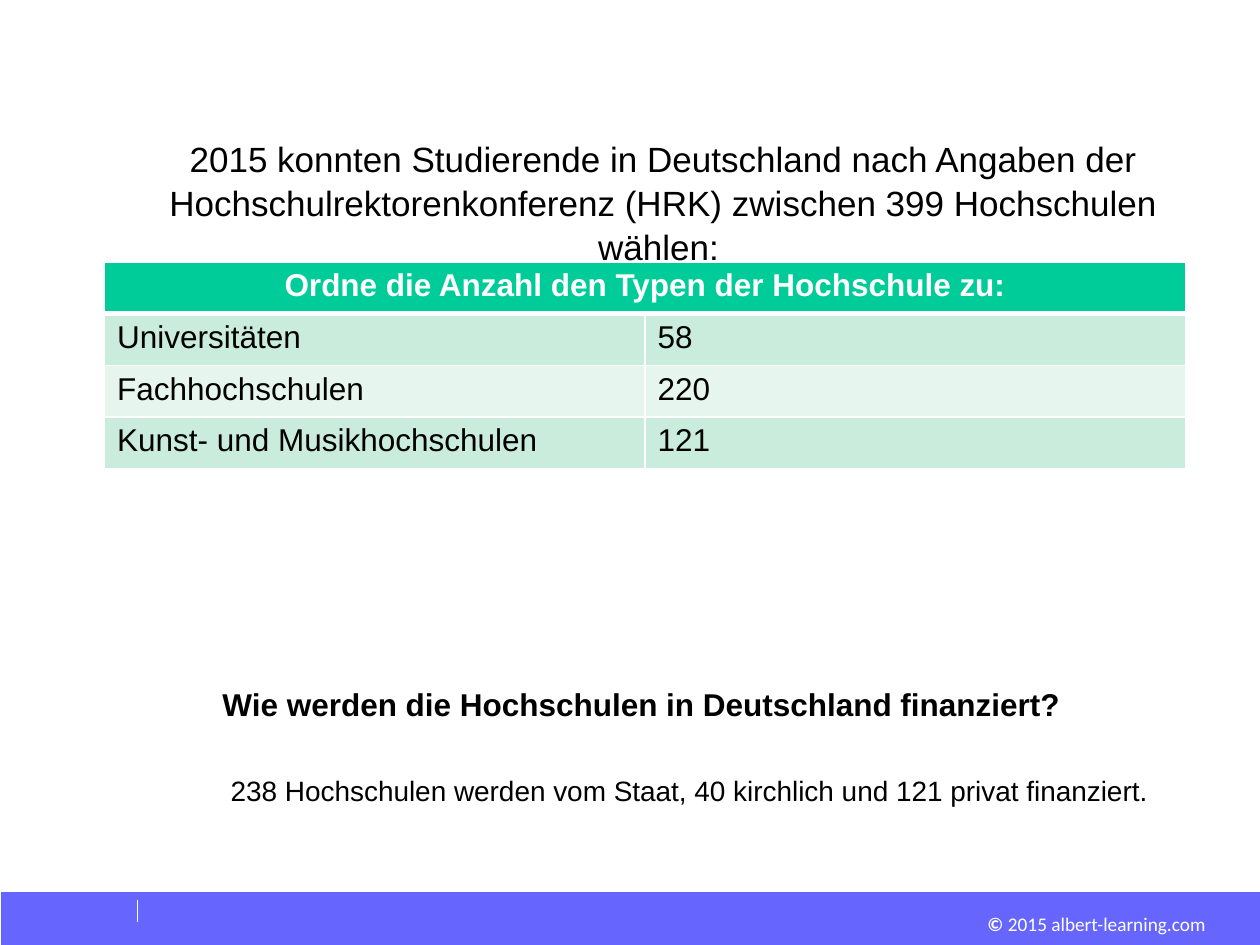
"""Build a slide on the number and funding of German universities."""
import pptx
import pptx.dml.color
import pptx.enum.shapes
import pptx.enum.text
import pptx.oxml.ns
import pptx.util
from lxml import etree

RGBColor = pptx.dml.color.RGBColor
Inches, Pt = pptx.util.Inches, pptx.util.Pt
ALIGN = pptx.enum.text.PP_ALIGN
qn = pptx.oxml.ns.qn

BLACK = RGBColor(0, 0, 0)
WHITE = RGBColor(255, 255, 255)
BLUE = RGBColor(0x66, 0x66, 0xFF)
GREEN = RGBColor(0x00, 0xCC, 0x99)
BANDS = (RGBColor(0xCA, 0xEC, 0xDD), RGBColor(0xE6, 0xF6, 0xEF))

INTRO = ("2015 konnten Studierende in Deutschland nach Angaben der "
         "Hochschulrektorenkonferenz (HRK) zwischen 399 Hochschulen wählen: ")
QUESTION = "Wie werden die Hochschulen in Deutschland finanziert?\t"
ANSWER = "238 Hochschulen werden vom Staat, 40 kirchlich und 121 privat finanziert."
BODY = [
    (INTRO, dict(size=20, align=ALIGN.CENTER)),
    (QUESTION, dict(size=18, bold=True, align=ALIGN.CENTER, before=238)),
    (ANSWER, dict(size=16, before=28, indent=1)),
]
HEADER = "Ordne die Anzahl den Typen der Hochschule zu:"
ROWS = [
    ("Universitäten", "58"),
    ("Fachhochschulen", "220"),
    ("Kunst- und Musikhochschulen", "121"),
]
FOOTER = [("© ", True), ("2015 albert-learning.com", False)]

WIDTH, HEIGHT = 10, 7.5
LEFT = 0.83
COL_W, ROW_H = 4.29, 0.41
BAR_H = 0.42


def box(left, top, width, height):
    return [Inches(v) for v in (left, top, width, height)]


def add_text(p, text, size=18, bold=False, color=BLACK, font="Arial",
             align=ALIGN.LEFT, before=0):
    p.alignment = align
    p.space_before = Pt(before)
    r = p.add_run()
    r.text = text
    r.font.size, r.font.bold, r.font.name = Pt(size), bold, font
    r.font.color.rgb = color


def prepare(tf):
    tf.word_wrap = True
    tf.auto_size = pptx.enum.text.MSO_AUTO_SIZE.NONE
    tf.vertical_anchor = pptx.enum.text.MSO_ANCHOR.TOP
    tf.margin_left = tf.margin_top = tf.margin_right = tf.margin_bottom = 0


def add_border(cell, side, width):
    ln = etree.SubElement(cell._tc.get_or_add_tcPr(), qn(f"a:ln{side}"),
                          w=str(Pt(width)))
    fill = etree.SubElement(ln, qn("a:solidFill"))
    etree.SubElement(fill, qn("a:srgbClr"), val=str(WHITE))


def add_body(s):
    sp = s.placeholders[1]
    sp.left, sp.top, sp.width, sp.height = box(LEFT, 1.08, 8.87, 5.14)
    tf = sp.text_frame
    prepare(tf)
    for i, (text, style) in enumerate(BODY):
        style = dict(style)
        p = tf.add_paragraph() if i else tf.paragraphs[0]
        pPr = p._p.get_or_add_pPr()
        pPr.set("marL", str(Inches(style.pop("indent", 0))))
        pPr.set("indent", "0")
        etree.SubElement(pPr, qn("a:buNone"))
        p.line_spacing = 1.04
        add_text(p, text, **style)


def add_table(s):
    count = len(ROWS) + 1
    table = s.shapes.add_table(
        count, 2, *box(LEFT, 2.08, 2 * COL_W, count * ROW_H)).table
    for row, texts in enumerate([(HEADER, "")] + ROWS):
        for col, text in enumerate(texts):
            cell = table.cell(row, col)
            for side in "LRTB":
                thick = (row, side) in ((0, "B"), (1, "T"))
                add_border(cell, side, 3 if thick else 1)
            cell.fill.solid()
            cell.fill.fore_color.rgb = BANDS[(row - 1) % 2] if row else GREEN
            style = {} if row else dict(bold=True, color=WHITE, align=ALIGN.CENTER)
            if text:
                add_text(cell.text_frame.paragraphs[0], text, **style)
    table.cell(0, 0).merge(table.cell(0, 1))


def add_footer(s):
    bar = s.shapes.add_shape(pptx.enum.shapes.MSO_SHAPE.RECTANGLE,
                             *box(0.01, HEIGHT - BAR_H, WIDTH - 0.01, BAR_H))
    bar.shadow.inherit = False
    bar.fill.solid()
    bar.fill.fore_color.rgb = BLUE
    bar.line.fill.background()

    rule = s.shapes.add_connector(pptx.enum.shapes.MSO_CONNECTOR.STRAIGHT,
                                  *box(1.09, 7.14, 1.09, 7.32))
    rule.line.color.rgb = WHITE
    rule.line.width = Pt(0.75)
    etree.SubElement(rule._element.spPr, qn("a:effectLst"))

    tf = s.shapes.add_textbox(*box(7.79, 7.24, 1.78, 0.19)).text_frame
    prepare(tf)
    for text, bold in FOOTER:
        add_text(tf.paragraphs[0], text, size=11, bold=bold, color=WHITE,
                 font="Calibri", align=ALIGN.RIGHT)


def main():
    prs = pptx.Presentation()
    prs.slide_width, prs.slide_height = Inches(WIDTH), Inches(HEIGHT)
    s = prs.slides.add_slide(prs.slide_layouts[1])
    title = s.shapes.title._element
    title.getparent().remove(title)
    add_footer(s)
    add_body(s)
    add_table(s)
    prs.save("out.pptx")


if __name__ == "__main__":
    main()
